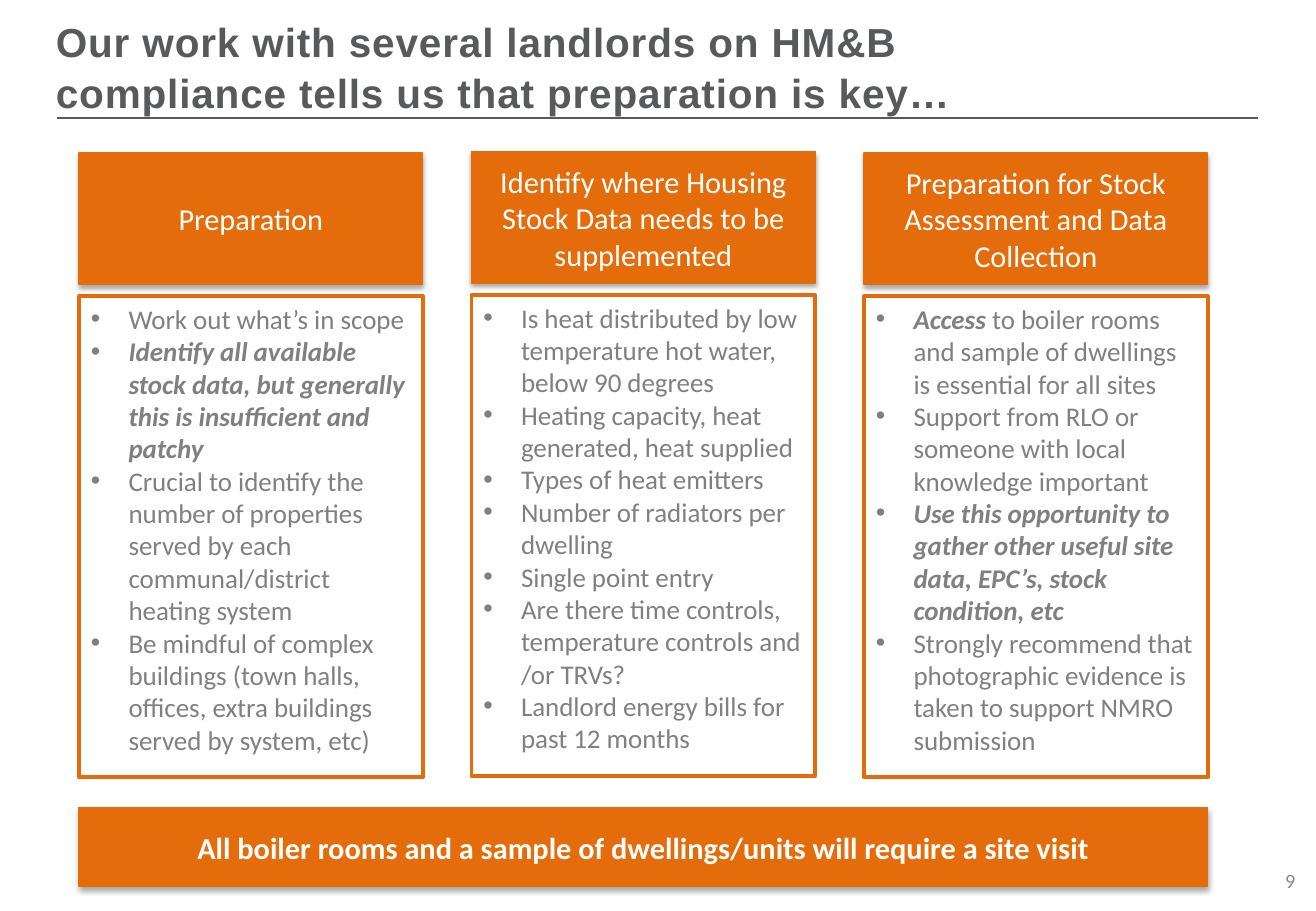
from lxml.etree import SubElement
from pptx import Presentation
from pptx.dml.color import RGBColor
from pptx.enum.shapes import MSO_CONNECTOR as Connector, MSO_SHAPE as Shape
from pptx.enum.text import MSO_ANCHOR as Anchor, MSO_AUTO_SIZE as AutoSize, PP_ALIGN as Align
from pptx.oxml.ns import qn
from pptx.util import Inches, Pt

ORANGE = RGBColor(0xE4, 0x6C, 0x0A)
SLATE = RGBColor(0x58, 0x59, 0x5B)
GREY = RGBColor(0x80, 0x80, 0x80)
PALE_GREY = RGBColor(0x89, 0x89, 0x89)
WHITE = RGBColor(0xFF, 0xFF, 0xFF)

TITLE = {"name": "Arial", "size": Pt(24), "bold": True}
HEADING = {"name": "Calibri", "size": Pt(18), "bold": False}
BANNER = {**HEADING, "bold": True}
BULLET = {"name": "Calibri", "size": Pt(16), "bold": False, "italic": False}
STRONG = {**BULLET, "bold": True, "italic": True}
NUMBER = {"name": "Calibri", "size": Pt(12)}

LEFT, COLUMN_WIDTH, COLUMN_STEP = 0.65, 2.83, 3.23
COLUMNS = [
    (1.26, "Preparation", [
        [("Work out what’s in scope", BULLET)],
        [("Identify all available stock data, but generally this is insufficient and patchy", STRONG)],
        [("Crucial to identify the number of properties served by each "
          "communal/district heating system", BULLET)],
        [("Be mindful of complex buildings (town halls, offices, extra buildings "
          "served by system, etc)", BULLET)],
    ]),
    (1.25, "Identify where Housing Stock Data needs to be supplemented", [
        [("Is heat distributed by low temperature hot water, below 90 degrees", BULLET)],
        [("Heating capacity, heat generated, heat supplied", BULLET)],
        [("Types of heat emitters", BULLET)],
        [("Number of radiators per dwelling", BULLET)],
        [("Single point entry", BULLET)],
        [("Are there time controls, temperature controls and /or TRVs?", BULLET)],
        [("Landlord energy bills for past 12 months", BULLET)],
    ]),
    (1.26, "Preparation for Stock Assessment and Data Collection", [
        [("Access ", STRONG),
         ("to boiler rooms and sample of dwellings is essential for all sites", BULLET)],
        [("Support from RLO or someone with local knowledge important", BULLET)],
        [("Use this opportunity to gather other useful site data, EPC’s, stock condition, etc", STRONG)],
        [("Strongly recommend that photographic evidence is taken to support NMRO submission", BULLET)],
    ]),
]


class SlideBuilder:
    """Draws styled elements on the current page."""

    def __init__(self, deck):
        """Add a title-only page to the deck."""
        self.page = deck.slides.add_slide(deck.slide_layouts[5])

    def add_span(self, para, text, style, color):
        """Add one formatted span to a paragraph."""
        span = para.add_run()
        span.text = text
        for name, value in style.items():
            setattr(span.font, name, value)
        span.font.color.rgb = color
        return span

    def frame(self, box, anchor):
        """Prepare the text frame of a box."""
        frame = box.text_frame
        settings = {"word_wrap": True, "auto_size": AutoSize.NONE, "vertical_anchor": anchor}
        for name, value in settings.items():
            setattr(frame, name, value)
        return frame

    def title(self, text, *place):
        """Place and format the page title."""
        box = self.page.shapes.title
        for name, value in zip(("left", "top", "width", "height"), place):
            setattr(box, name, Inches(value))
        para = self.frame(box, Anchor.TOP).paragraphs[0]
        para.alignment = Align.LEFT
        para.line_spacing = 1.05
        span = self.add_span(para, text, TITLE, SLATE)
        span._r.get_or_add_rPr().set("spc", "50")

    def rule(self, left, right, top):
        """Draw the line under the title."""
        line = self.page.shapes.add_connector(
            Connector.STRAIGHT, Inches(left), Inches(top), Inches(right), Inches(top))
        line.line.color.rgb = SLATE
        line.line.width = Pt(1)
        SubElement(line._element.spPr, qn("a:effectLst"))

    def rectangle(self, place, line_width):
        """Draw an orange-edged rectangle."""
        box = self.page.shapes.add_shape(Shape.RECTANGLE, *map(Inches, place))
        box.shadow.inherit = False
        box.line.color.rgb = ORANGE
        box.line.width = Pt(line_width)
        return box

    def panel(self, text, style, *place):
        """Draw a filled panel with centred text and a soft shadow."""
        box = self.rectangle(place, 0.75)
        box.fill.solid()
        box.fill.fore_color.rgb = ORANGE
        effects = box._element.spPr.find(qn("a:effectLst"))
        shadow = SubElement(effects, qn("a:outerShdw"), blurRad=str(Pt(3.1)),
                            dist=str(Pt(1.8)), dir="5400000", rotWithShape="0")
        black = SubElement(shadow, qn("a:srgbClr"), val="000000")
        SubElement(black, qn("a:alpha"), val="35000")
        para = self.frame(box, Anchor.MIDDLE).paragraphs[0]
        para.alignment = Align.CENTER
        self.add_span(para, text, style, WHITE)

    def bullets(self, items, *place):
        """Draw an outlined box with a bulleted list."""
        box = self.rectangle(place, 2.25)
        box.fill.background()
        frame = self.frame(box, Anchor.TOP)
        for index, spans in enumerate(items):
            para = frame.add_paragraph() if index else frame.paragraphs[0]
            para.alignment = Align.LEFT
            properties = para._p.get_or_add_pPr()
            properties.set("marL", str(Inches(0.31)))
            properties.set("indent", str(-Inches(0.31)))
            SubElement(properties, qn("a:buFont"), typeface="Arial")
            SubElement(properties, qn("a:buChar"), char="•")
            for text, style in spans:
                self.add_span(para, text, style, GREY)

    def number(self, text, *place):
        """Place the page number."""
        box = self.page.shapes.add_textbox(*map(Inches, place))
        para = self.frame(box, Anchor.MIDDLE).paragraphs[0]
        para.alignment = Align.RIGHT
        self.add_span(para, text, NUMBER, PALE_GREY)


def main():
    """Build and save the deck."""
    deck = Presentation()
    deck.slide_width, deck.slide_height = Inches(10.83), Inches(7.5)
    builder = SlideBuilder(deck)
    builder.rule(0.47, 10.35, 0.97)
    builder.title("Our work with several landlords on HM&B compliance tells us "
                  "that preparation is key…", 0.36, 0.07, 8.35, 0.73)
    builder.number("9", 8.23, 7.05, 2.53, 0.4)
    for index, (top, heading, items) in enumerate(COLUMNS):
        left = LEFT + index * COLUMN_STEP
        builder.bullets(items, left, top + 1.18, COLUMN_WIDTH, 3.96)
        builder.panel(heading, HEADING, left, top, COLUMN_WIDTH, 1.08)
    builder.panel("All boiler rooms and a sample of dwellings/units will require a site visit",
                  BANNER, LEFT, 6.65, 2 * COLUMN_STEP + COLUMN_WIDTH, 0.65)
    deck.save("out.pptx")


if __name__ == "__main__":
    main()
